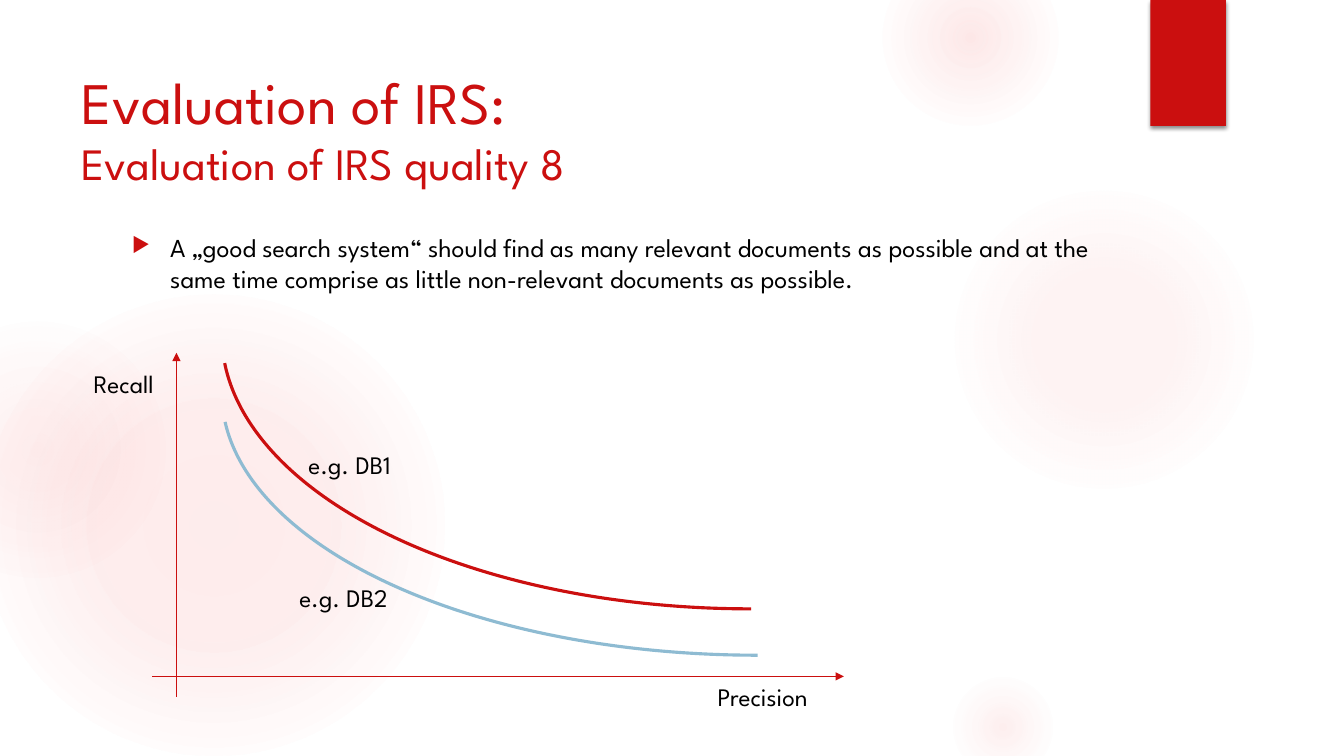
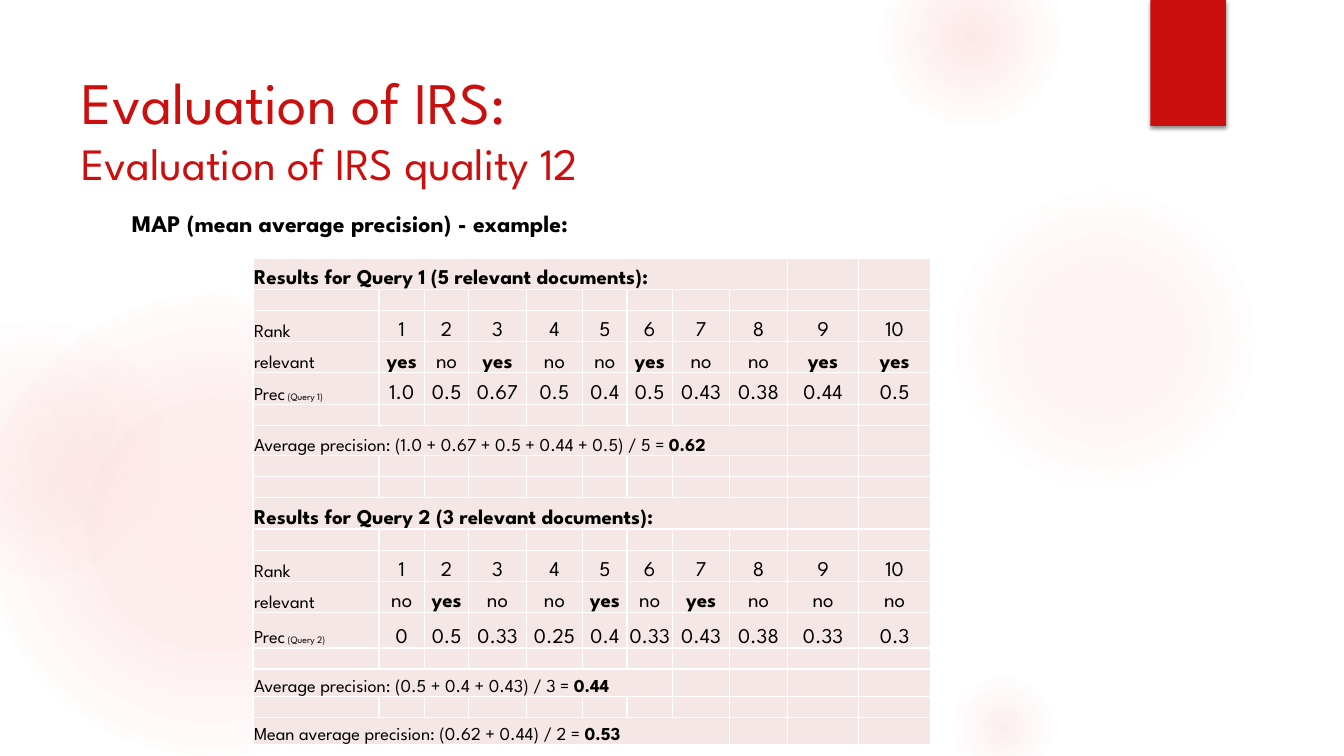
from dataclasses import dataclass

from lxml import etree
from pptx import Presentation
from pptx.dml.color import RGBColor
from pptx.enum.shapes import MSO_CONNECTOR, MSO_SHAPE
from pptx.enum.text import MSO_ANCHOR, PP_ALIGN
from pptx.oxml import parse_xml
from pptx.oxml.ns import nsdecls, qn
from pptx.util import Inches, Pt

OVAL, RECT, ARC = MSO_SHAPE.OVAL, MSO_SHAPE.RECTANGLE, MSO_SHAPE.ARC
STRAIGHT = MSO_CONNECTOR.STRAIGHT
TOP, MIDDLE, BOTTOM = MSO_ANCHOR.TOP, MSO_ANCHOR.MIDDLE, MSO_ANCHOR.BOTTOM
LEFT, CENTER = PP_ALIGN.LEFT, PP_ALIGN.CENTER


@dataclass(frozen=True)
class Theme:
    font: str = "League Spartan"
    red: str = "CB0F0F"
    blue: str = "8EBBD2"
    ink: str = "000000"
    cell: str = "F6E7E7"
    rule: str = "FFFFFF"
    glow: str = "F35C5C"
    title: float = 42
    sub: float = 32
    body: float = 18.5
    lead: float = 17
    label: float = 18
    value: float = 15
    name: float = 13
    note: float = 7
    empty: float = 10


T = Theme()

# Soft circles: left, top, size, then (position, opacity) stops in percent
GLOWS = [
    (-0.17, 2.92, 4.58, [(0, 11), (36, 10), (75, 0)]),
    (-0.92, 3.17, 2.58, [(0, 8), (36, 5), (71, 0)]),
    (9.41, 1.83, 3.08, [(0, 7), (36, 6), (69, 0)]),
    (8.75, -0.5, 1.75, [(0, 14), (36, 7), (73, 0)]),
    (9.41, 6.67, 1.08, [(0, 10), (31, 5), (66, 0)]),
]


# Shared helpers
def rgb(code):
    return RGBColor.from_string(code)


def inches(*sizes):
    return [Inches(size) for size in sizes]


def style(run, size, color=T.ink, bold=False):
    font = run.font
    font.name, font.size, font.bold = T.font, Pt(size), bold
    font.color.rgb = rgb(color)


def add_text(slide, box, text, sizes, color=T.ink, bold=False, anchor=TOP):
    """Add a text box; each line of the paragraph takes the next size."""
    frame = slide.shapes.add_textbox(*inches(*box)).text_frame
    frame.word_wrap = True
    frame.vertical_anchor = anchor
    para = frame.paragraphs[0]
    para.text = text
    for run, size in zip(para.runs, sizes):
        style(run, size, color, bold)
    return para


def add_glow(slide, left, top, size, stops):
    oval = slide.shapes.add_shape(OVAL, *inches(left, top, size, size))
    oval.shadow.inherit = False
    oval.line.fill.background()
    oval.fill.background()
    marks = "".join(
        f'<a:gs pos="{pos * 1000}"><a:srgbClr val="{T.glow}">'
        f'<a:alpha val="{alpha * 1000}"/></a:srgbClr></a:gs>'
        for pos, alpha in stops)
    fill = parse_xml(
        f'<a:gradFill {nsdecls("a")}><a:gsLst>{marks}</a:gsLst>'
        '<a:path path="circle"><a:fillToRect l="50000" t="50000" '
        'r="50000" b="50000"/></a:path></a:gradFill>')
    props = oval._element.spPr
    props.replace(props.find(qn("a:noFill")), fill)


def add_tab(slide, box):
    tab = slide.shapes.add_shape(RECT, *inches(*box))
    tab.fill.solid()
    tab.fill.fore_color.rgb = rgb(T.red)
    tab.line.fill.background()
    tab.shadow.inherit = False
    tab._element.spPr.find(qn("a:effectLst")).append(parse_xml(
        f'<a:outerShdw {nsdecls("a")} blurRad="{Pt(3)}" dist="{Pt(2)}" '
        'dir="5400000"><a:srgbClr val="000000"><a:alpha val="45000"/>'
        '</a:srgbClr></a:outerShdw>'))


def add_base(deck, number):
    """Start a slide with the glows, the red tab and the title."""
    slide = deck.slides.add_slide(deck.slide_layouts[6])
    for glow in GLOWS:
        add_glow(slide, *glow)
    add_tab(slide, (11.41, 0, 0.75, 1.25))
    add_text(slide, (0.71, 0.5, 10.29, 1.53),
             f"Evaluation of IRS:\vEvaluation of IRS quality {number}",
             (T.title, T.sub), T.red, anchor=MIDDLE)
    return slide


def add_body(slide, box, text, size, bold=False, bullet=False):
    para = add_text(slide, box, text, [size], bold=bold)
    para.space_before, para.space_after = Pt(size * 0.2), Pt(6)
    if bullet:
        props = para._p.get_or_add_pPr()
        props.set("marL", str(Inches(0.38)))
        props.set("indent", str(-Inches(0.38)))
        color = etree.SubElement(props, qn("a:buClr"))
        etree.SubElement(color, qn("a:srgbClr"), val=T.red)
        etree.SubElement(props, qn("a:buSzPct"), val="80000")
        etree.SubElement(props, qn("a:buChar"), char="▶")


# Recall and precision plot
def add_axis(slide, *ends):
    axis = slide.shapes.add_connector(STRAIGHT, *inches(*ends))
    axis.line.color.rgb = rgb(T.red)
    axis.line.width = Pt(0.75)
    props = axis._element.spPr
    etree.SubElement(props.find(qn("a:ln")), qn("a:tailEnd"), type="triangle")
    etree.SubElement(props, qn("a:effectLst"))


def add_curve(slide, box, color):
    curve = slide.shapes.add_shape(ARC, *inches(*box))
    curve.adjustments[0], curve.adjustments[1] = 161.87, 214.14
    curve.rotation = 180
    curve.shadow.inherit = False
    curve.fill.background()
    curve.line.color.rgb = rgb(color)
    curve.line.width = Pt(2.25)


def add_plot(slide, left, top):
    """Draw the plot with its upper left corner at the given point."""
    add_axis(slide, left + 0.92, top + 3.41, left + 0.92, top)
    add_axis(slide, left + 0.68, top + 3.21, left + 7.54, top + 3.21)
    add_curve(slide, (left + 1.37, top - 2.2, 10.61, 5.2), T.blue)
    add_curve(slide, (left + 1.37, top - 2.9, 10.48, 5.44), T.red)
    for x, y, width, text in [(0, 0.11, 0.96, "Recall"),
                              (6.19, 3.21, 1.27, "Precision"),
                              (2.13, 0.91, 1.28, "e.g. DB1"),
                              (2.04, 2.23, 1.28, "e.g. DB2")]:
        add_text(slide, (left + x, top + y, width, 0.4), text, [T.label])


# Precision table: a row is (height, span of first cell, cells),
# a cell is a list of (text, size, bold) runs
COLS = [1.25, 0.45, 0.44, 0.57, 0.56, 0.44, 0.45, 0.57, 0.57, 0.71, 0.71]
BLANK = (0.21, 1, [])


def data_row(height, head, values):
    cells = [[(value, T.value, value == "yes")] for value in values]
    return height, 1, [head] + cells


def sum_row(height, span, text, result):
    return height, span, [[(text, T.name, False), (result, T.name, True)]]


def query_rows(number, hits, precs, high, total):
    ranks = range(1, len(precs) + 1)
    title = f"Results for Query {number} ({len(hits)} relevant documents):"
    return [
        (0.31, 9, [[(title, T.value, True)]]),
        BLANK,
        data_row(0.31, [("Rank", T.name, False)], map(str, ranks)),
        data_row(0.31, [("relevant", T.name, False)],
                 ["yes" if rank in hits else "no" for rank in ranks]),
        data_row(high, [("Prec", T.name, False),
                        (f" (Query {number})", T.note, False)], precs),
        BLANK,
        total,
    ]


ROWS = [
    *query_rows(1, {1, 3, 6, 9, 10},
                "1.0 0.5 0.67 0.5 0.4 0.5 0.43 0.38 0.44 0.5".split(), 0.31,
                sum_row(0.3, 9, "Average precision: (1.0 + 0.67 + 0.5 + 0.44"
                        " + 0.5) / 5 = ", "0.62")),
    BLANK,
    BLANK,
    *query_rows(2, {2, 5, 7},
                "0 0.5 0.33 0.25 0.4 0.33 0.43 0.38 0.33 0.3".split(), 0.35,
                sum_row(0.27, 7, "Average precision: (0.5 + 0.4 + 0.43)"
                        " / 3 = ", "0.44")),
    BLANK,
    sum_row(0.27, 8, "Mean average precision: (0.62 + 0.44) / 2 = ", "0.53"),
]


def fill_cell(cell, runs, align):
    cell.margin_left = cell.margin_top = cell.margin_right = Inches(0.01)
    cell.margin_bottom = 0
    cell.vertical_anchor = BOTTOM
    cell.fill.solid()
    cell.fill.fore_color.rgb = rgb(T.cell)
    for place, side in enumerate(("lnL", "lnR", "lnT", "lnB")):
        cell._tc.tcPr.insert(place, parse_xml(
            f'<a:{side} {nsdecls("a")} w="{Pt(1)}"><a:solidFill>'
            f'<a:srgbClr val="{T.rule}"/></a:solidFill></a:{side}>'))
    para = cell.text_frame.paragraphs[0]
    para.alignment = align
    for text, size, bold in runs:
        run = para.add_run()
        run.text = text
        style(run, size, bold=bold)
    if not runs:
        etree.SubElement(para._p, qn("a:endParaRPr"), sz=str(T.empty * 100))


def add_grid(slide, left, top):
    heights = [row[0] for row in ROWS]
    box = inches(left, top, sum(COLS), sum(heights))
    grid = slide.shapes.add_table(len(ROWS), len(COLS), *box).table
    grid.first_row = grid.horz_banding = False
    for column, width in zip(grid.columns, COLS):
        column.width = Inches(width)
    for r, (height, span, cells) in enumerate(ROWS):
        grid.rows[r].height = Inches(height)
        for c in range(len(COLS)):
            fill_cell(grid.cell(r, c), cells[c] if c < len(cells) else [],
                      CENTER if c else LEFT)
        if span > 1:
            grid.cell(r, 0).merge(grid.cell(r, span - 1))


# Slides
def curve_slide(deck):
    slide = add_base(deck, 8)
    add_body(slide, (1.21, 2.25, 9.78, 1.08),
             "A „good search system“ should find as many relevant documents "
             "as possible and at the same time comprise as little "
             "non-relevant documents as possible.", T.body, bullet=True)
    add_plot(slide, 0.83, 3.5)


def table_slide(deck):
    slide = add_base(deck, 12)
    add_body(slide, (1.21, 2.02, 9.78, 0.42),
             "MAP (mean average precision) - example:", T.lead, bold=True)
    add_grid(slide, 2.51, 2.56)


def main():
    deck = Presentation()
    deck.slide_width, deck.slide_height = inches(13.33, 7.5)
    curve_slide(deck)
    table_slide(deck)
    deck.save("out.pptx")


if __name__ == "__main__":
    main()
